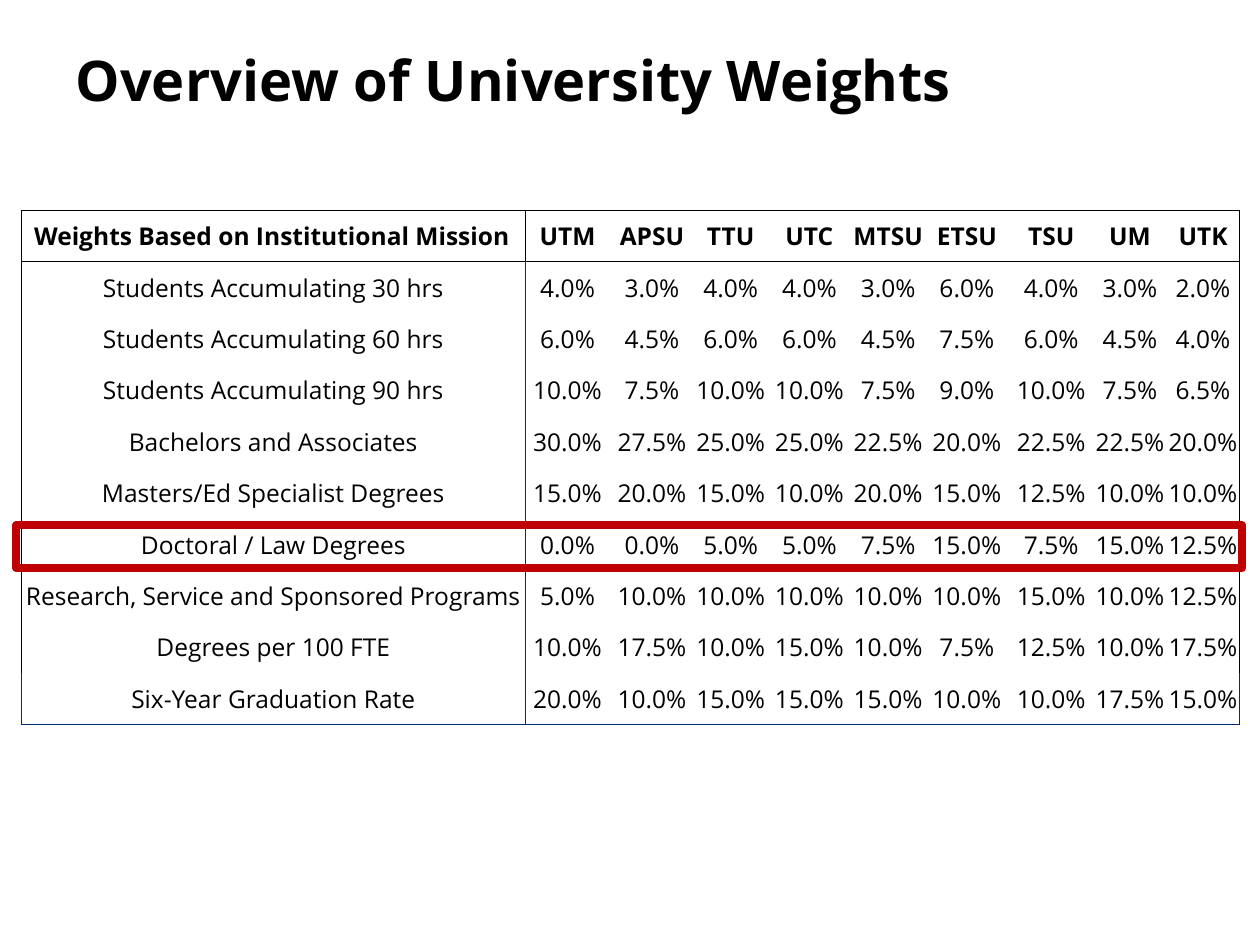
"""Build a slide with a table of university weights and one highlighted row."""
from dataclasses import dataclass

from lxml import etree
from pptx import Presentation
from pptx.dml.color import RGBColor
from pptx.enum.shapes import MSO_SHAPE
from pptx.enum.text import MSO_ANCHOR, MSO_AUTO_SIZE, PP_ALIGN
from pptx.oxml.ns import qn
from pptx.util import Inches, Pt

RECTANGLE = MSO_SHAPE.RECTANGLE
MIDDLE = MSO_ANCHOR.MIDDLE
NO_AUTOFIT = MSO_AUTO_SIZE.NONE
LEFT, CENTER = PP_ALIGN.LEFT, PP_ALIGN.CENTER


@dataclass(frozen=True)
class Theme:
    font: str = "Open Sans"
    text: str = "000000"
    paper: str = "FFFFFF"
    navy: str = "002C73"
    highlight: str = "C00000"
    title_size: float = 32
    table_size: float = 14
    thin_line: float = 0.5
    navy_line: float = 1
    highlight_line: float = 4.5


theme = Theme()
BLACK_BORDER = (theme.text, theme.thin_line)
NAVY_BORDER = (theme.navy, theme.navy_line)

HEADER = ("Weights Based on Institutional Mission", "UTM APSU TTU UTC MTSU ETSU TSU UM UTK")
WEIGHTS = [
    ("Students Accumulating 30 hrs", "4.0% 3.0% 4.0% 4.0% 3.0% 6.0% 4.0% 3.0% 2.0%"),
    ("Students Accumulating 60 hrs", "6.0% 4.5% 6.0% 6.0% 4.5% 7.5% 6.0% 4.5% 4.0%"),
    ("Students Accumulating 90 hrs", "10.0% 7.5% 10.0% 10.0% 7.5% 9.0% 10.0% 7.5% 6.5%"),
    ("Bachelors and Associates", "30.0% 27.5% 25.0% 25.0% 22.5% 20.0% 22.5% 22.5% 20.0%"),
    ("Masters/Ed Specialist Degrees", "15.0% 20.0% 15.0% 10.0% 20.0% 15.0% 12.5% 10.0% 10.0%"),
    ("Doctoral / Law Degrees", "0.0% 0.0% 5.0% 5.0% 7.5% 15.0% 7.5% 15.0% 12.5%"),
    ("Research, Service and Sponsored Programs", "5.0% 10.0% 10.0% 10.0% 10.0% 10.0% 15.0% 10.0% 12.5%"),
    ("Degrees per 100 FTE", "10.0% 17.5% 10.0% 15.0% 10.0% 7.5% 12.5% 10.0% 17.5%"),
    ("Six-Year Graduation Rate", "20.0% 10.0% 15.0% 15.0% 15.0% 10.0% 10.0% 17.5% 15.0%"),
]
COLUMN_WIDTHS = [4, 0.67, 0.67, 0.58, 0.67, 0.58, 0.67, 0.67, 0.58, 0.58]
TABLE_HEIGHT = 4.08


def style_paragraph(paragraph, size, bold, alignment):
    paragraph.alignment = alignment
    paragraph.font.name = theme.font
    paragraph.font.size = Pt(size)
    paragraph.font.bold = bold
    paragraph.font.color.rgb = RGBColor.from_string(theme.text)


def set_borders(cell, borders):
    properties = cell._tc.get_or_add_tcPr()
    for side in "LRTB":
        line = etree.SubElement(properties, qn(f"a:ln{side}"))
        if side in borders:
            color, width = borders[side]
            line.set("w", str(Pt(width)))
            fill = etree.SubElement(line, qn("a:solidFill"))
            etree.SubElement(fill, qn("a:srgbClr"), val=color)
        else:
            etree.SubElement(line, qn("a:noFill"))


presentation = Presentation()
presentation.slide_width = Inches(10)
presentation.slide_height = Inches(7.5)
slide = presentation.slides.add_slide(presentation.slide_layouts[5])

title = slide.shapes.title
title.left, title.top = Inches(0.5), Inches(0)
title.width, title.height = Inches(9), Inches(1.25)
title.text_frame.text = "Overview of University Weights"
title.text_frame.vertical_anchor = MIDDLE
title.text_frame.auto_size = NO_AUTOFIT
style_paragraph(title.text_frame.paragraphs[0], theme.title_size, True, LEFT)

rows = [HEADER, *WEIGHTS]
last_row, last_column = len(rows) - 1, len(COLUMN_WIDTHS) - 1
table = slide.shapes.add_table(
    len(rows), len(COLUMN_WIDTHS), Inches(0.17), Inches(1.67),
    Inches(sum(COLUMN_WIDTHS)), Inches(TABLE_HEIGHT),
).table
for column, width in zip(table.columns, COLUMN_WIDTHS):
    column.width = Inches(width)

for row_index, (label, values) in enumerate(rows):
    table.rows[row_index].height = Inches(TABLE_HEIGHT / len(rows))
    is_header = row_index == 0
    outer_border = NAVY_BORDER if row_index == last_row else BLACK_BORDER
    divider = BLACK_BORDER if is_header else NAVY_BORDER
    for column_index, text in enumerate([label, *values.split()]):
        borders = {}
        if column_index == 0:
            borders.update(L=outer_border, R=divider)
        if column_index == 1:
            borders["L"] = divider
        if column_index == last_column:
            borders["R"] = outer_border
        if row_index <= 1:
            borders["T"] = BLACK_BORDER
        if row_index in (0, last_row):
            borders["B"] = outer_border

        is_corner = is_header and column_index == 0
        cell = table.cell(row_index, column_index)
        cell.text = text
        cell.vertical_anchor = MIDDLE
        cell.margin_left = Inches(0.1 if is_corner else 0)
        cell.margin_right = cell.margin_top = cell.margin_bottom = Inches(0)
        set_borders(cell, borders)
        cell.fill.solid()
        cell.fill.fore_color.rgb = RGBColor.from_string(theme.paper)
        alignment = LEFT if is_corner else CENTER
        style_paragraph(cell.text_frame.paragraphs[0], theme.table_size, is_header, alignment)

highlight = slide.shapes.add_shape(
    RECTANGLE, Inches(0.13), Inches(4.17), Inches(9.73), Inches(0.34)
)
highlight.shadow.inherit = False
highlight.fill.background()
highlight.line.color.rgb = RGBColor.from_string(theme.highlight)
highlight.line.width = Pt(theme.highlight_line)
etree.SubElement(highlight.line._get_or_add_ln(), qn("a:round"))

presentation.save("out.pptx")
